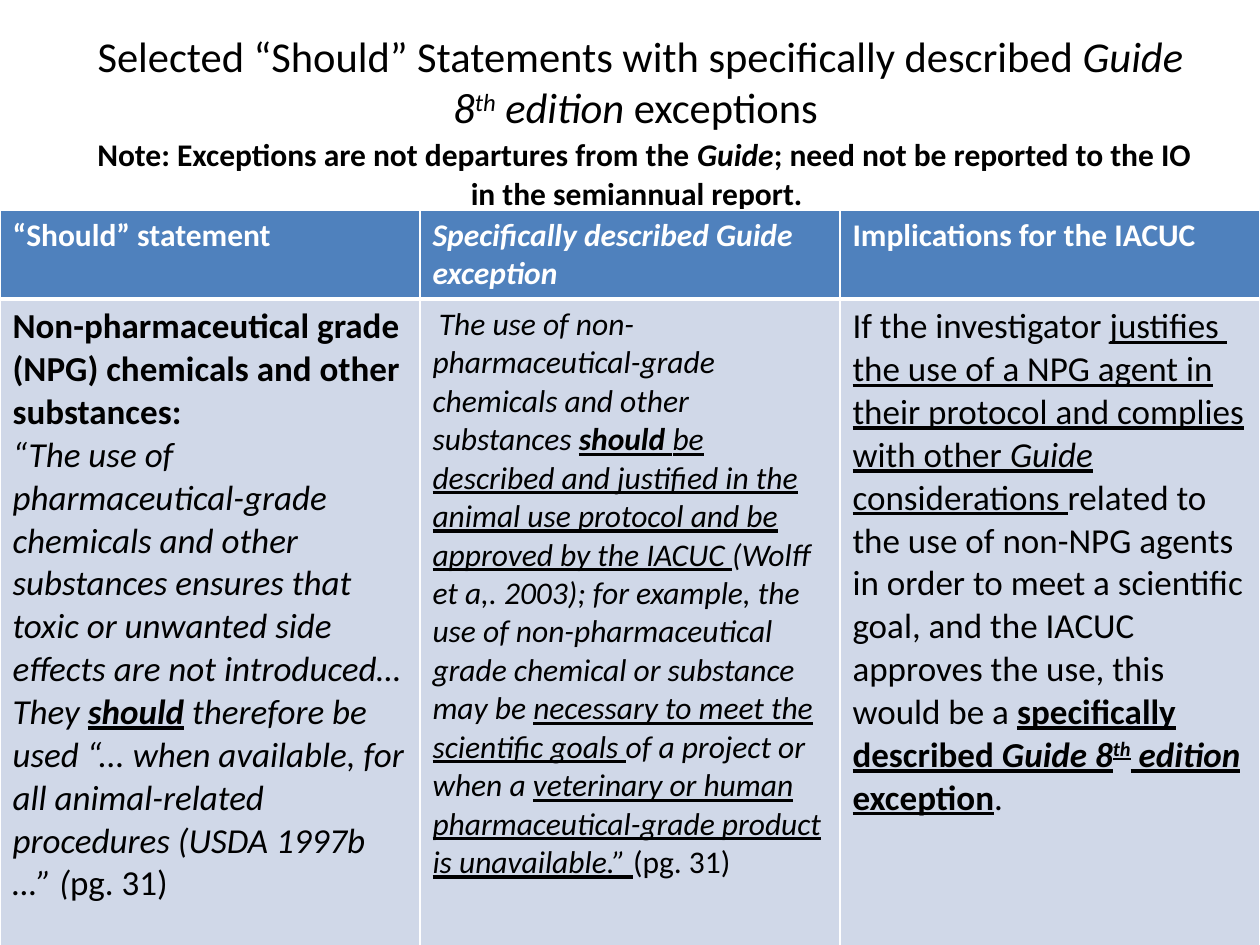
from lxml import etree
from pptx import Presentation
from pptx import util as u
from pptx.dml.color import RGBColor
from pptx.enum import text
from pptx.oxml import ns

FONT = "Calibri"
BLACK, WHITE, HEAD_BLUE, BODY_BLUE = "000000", "FFFFFF", "4F81BD", "D0D8E8"

TITLE = [
    ("Selected “Should” Statements with specifically described ", 24.3, ""),
    ("Guide 8", 24.3, "i"),
    ("th", 24.3, "i^"),
    (" edition ", 24.3, "i"),
    ("exceptions\u00a0", 24.3, ""),
    None,
    (" ", 19.8, ""),
    ("Note: Exceptions are not departures from the ", 18, "b"),
    ("Guide", 18, "bi"),
    ("; need not be reported to the IO in the semiannual report. ", 18, "b"),
]

HEADINGS = [
    [[("“Should” statement", 18, "b")]],
    [[("Specifically described Guide exception", 18, "bi")]],
    [[("Implications for the IACUC", 18, "b")]],
]

STATEMENT = [
    [("Non-pharmaceutical grade (NPG) chemicals and other substances:", 20, "b")],
    [
        ("“The use of pharmaceutical-grade chemicals and other substances ensures "
         "that toxic or unwanted side effects are not introduced…They ", 20, "i"),
        ("should", 20, "biu"),
        (" ", 20, "bi"),
        ("therefore be used “... when available, for all animal-related "
         "procedures (USDA 1997b …” (", 20, "i"),
        ("pg. 31)", 20, ""),
    ],
]

EXCEPTION = [[
    (" ", 16, "bi"),
    ("The use of non-pharmaceutical-grade chemicals and other substances ", 18, "i"),
    ("should ", 18, "biu"),
    ("be described and justified in the animal use protocol and be approved "
     "by the IACUC ", 18, "iu"),
    ("(Wolff et a,. 2003); for example, the use of non-pharmaceutical grade "
     "chemical or substance may be ", 18, "i"),
    ("necessary to meet the scientific goals ", 18, "iu"),
    ("of a project or when a ", 18, "i"),
    ("veterinary or human pharmaceutical-grade product is unavailable.” ", 18, "iu"),
    ("(pg. 31)\u00a0", 18, ""),
]]

IMPLICATIONS = [[
    ("If the investigator ", 20, ""),
    ("justifies  the use of a NPG agent in their protocol and complies with other ",
     20, "u"),
    ("Guide ", 20, "iu"),
    ("considerations ", 20, "u"),
    ("related to the use of non-NPG agents in order to meet a scientific goal, "
     "and the IACUC approves the use, this would be a ", 20, ""),
    ("specifically", 20, "bu"),
    (" ", 20, "u"),
    ("described ", 20, "bu"),
    ("Guide 8", 20, "biu"),
    ("th", 20, "biu^"),
    (" edition", 20, "biu"),
    (" exception", 20, "bu"),
    (".\u00a0", 20, ""),
]]


def colour(value):
    return RGBColor.from_string(value)


def add_spans(para, spans, ink):
    for item in spans:
        if item is None:
            para.add_line_break()
            continue
        words, size, style = item
        span = para.add_run()
        span.text = words
        span.font.name = FONT
        span.font.size = u.Pt(size)
        span.font.bold = "b" in style
        span.font.italic = "i" in style
        span.font.underline = "u" in style
        span.font.color.rgb = colour(ink)
        if "^" in style:
            span.font._element.set("baseline", "30000")


def add_border(cell, side, points):
    line = etree.SubElement(cell._tc.get_or_add_tcPr(), ns.qn(f"a:ln{side}"),
                            w=str(u.Pt(points)))
    fill = etree.SubElement(line, ns.qn("a:solidFill"))
    etree.SubElement(fill, ns.qn("a:srgbClr"), val=WHITE)


def fill_cell(cell, paragraphs, ink, background, borders):
    for side, points in borders.items():
        add_border(cell, side, points)
    cell.fill.solid()
    cell.fill.fore_color.rgb = colour(background)
    for index, spans in enumerate(paragraphs):
        frame = cell.text_frame
        para = frame.paragraphs[0] if index == 0 else frame.add_paragraph()
        add_spans(para, spans, ink)


def add_title(page, left, top, width, height):
    box = page.shapes.add_textbox(left, top, width, height)
    frame = box.text_frame
    frame.word_wrap = True
    frame.vertical_anchor = text.MSO_ANCHOR.MIDDLE
    para = frame.paragraphs[0]
    para.alignment = text.PP_ALIGN.CENTER
    add_spans(para, TITLE, BLACK)


def add_guidance_table(page, left, top, width, height):
    table = page.shapes.add_table(2, 3, left, top, width, height).table
    heading_height = u.Cm(1.8)
    table.rows[0].height = heading_height
    table.rows[1].height = height - heading_height
    rows = [
        (HEADINGS, WHITE, HEAD_BLUE, {"L": 1, "R": 1, "T": 1, "B": 3}),
        ([STATEMENT, EXCEPTION, IMPLICATIONS], BLACK, BODY_BLUE,
         {"L": 1, "R": 1, "T": 3, "B": 1}),
    ]
    for row, (contents, ink, background, borders) in enumerate(rows):
        for column, paragraphs in enumerate(contents):
            fill_cell(table.cell(row, column), paragraphs, ink, background, borders)


def main():
    deck = Presentation()
    deck.slide_width, deck.slide_height = u.Cm(25.4), u.Cm(19.05)
    page = deck.slides.add_slide(deck.slide_layouts[6])
    add_title(page, u.Cm(1.48), u.Cm(0.85), u.Cm(22.86), u.Cm(3.18))
    add_guidance_table(page, u.Cm(0), u.Cm(4.23), deck.slide_width, u.Cm(14.94))
    deck.save("out.pptx")


if __name__ == "__main__":
    main()
